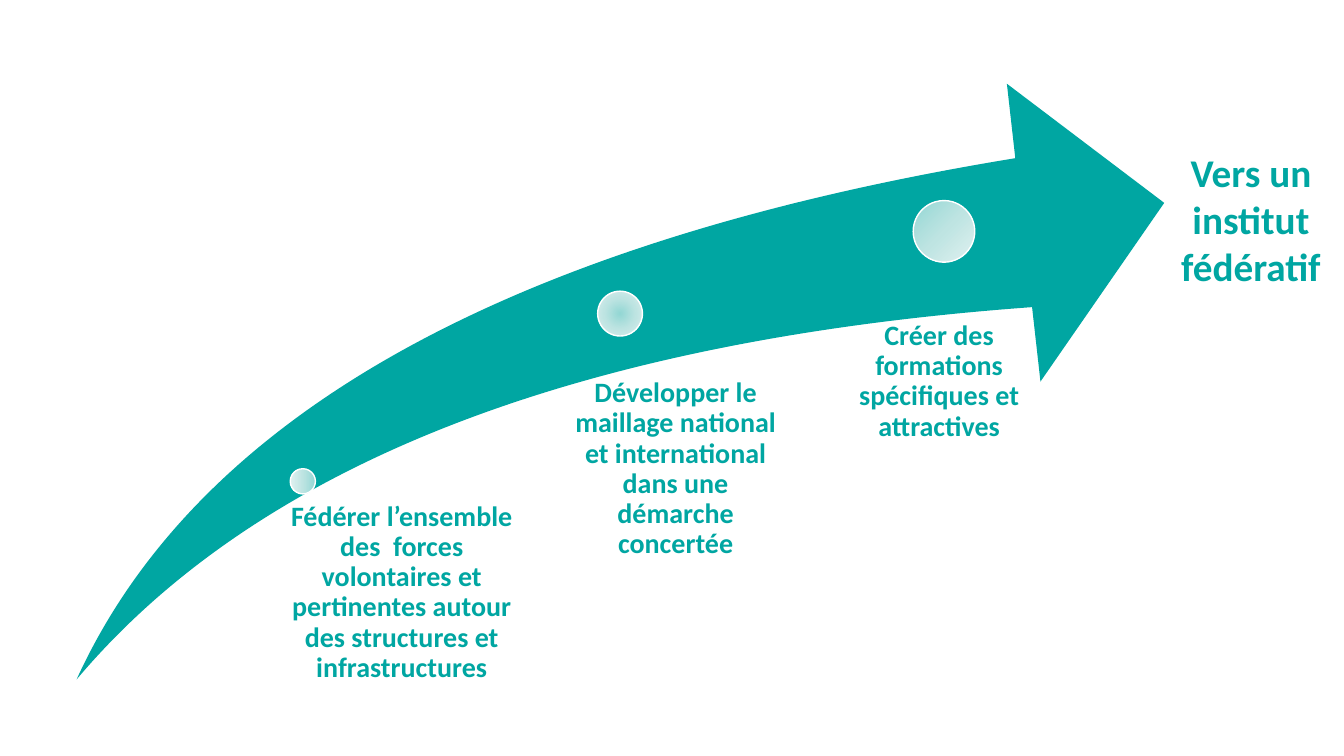
from collections import namedtuple

from pptx import Presentation
from pptx.dml.color import RGBColor
from pptx.enum.shapes import MSO_SHAPE
from pptx.enum.text import PP_ALIGN
from pptx.oxml import parse_xml
from pptx.oxml.ns import nsdecls, qn
from pptx.util import Pt

TEAL = RGBColor(0x00, 0xA6, 0xA2)
WHITE = RGBColor(0xFF, 0xFF, 0xFF)
MINTS = (
    RGBColor(0x93, 0xD7, 0xD4),
    RGBColor(0xBE, 0xE4, 0xE2),
    RGBColor(0xE0, 0xF1, 0xF0),
)

LEFTWARD = '<a:lin ang="10800000" scaled="0"/>'
FROM_CENTRE = '<a:path path="circle"><a:fillToRect l="50000" t="50000" r="50000" b="50000"/></a:path>'
FROM_CORNER = '<a:path path="circle"><a:fillToRect r="100000" b="100000"/></a:path>'

Box = namedtuple("Box", "left top width height")
Milestone = namedtuple("Milestone", "wording centre diameter shading caption inset")

SWOOSH = Box(54.7, 59.8, 776.9, 425.5)
GOAL = Box(835.2, 102.2, 116.6, 108.7)

MILESTONES = (
    Milestone(
        "Fédérer l’ensemble des  forces volontaires et pertinentes autour des structures et infrastructures",
        (161.6, 284), 18, LEFTWARD, Box(132.5, 298.8, 190, 123), (9.5, 0),
    ),
    Milestone(
        "Développer le maillage national et international dans une démarche concertée",
        (388.2, 164.2), 32, FROM_CENTRE, Box(337.7, 168.5, 163.4, 231), (17, 42),
    ),
    Milestone(
        "Créer des formations spécifiques et attractives",
        (619.6, 105.5), 44, FROM_CORNER, Box(522.7, 107.3, 163.4, 255), (23.5, 62.3),
    ),
)


def points(box):
    return [Pt(length) for length in box]


def add_text(slide, box, paragraphs, size, insets, line_spacing=1.0):
    frame = slide.shapes.add_textbox(*points(box)).text_frame
    frame.word_wrap = True
    frame.margin_left, frame.margin_top, frame.margin_right, frame.margin_bottom = points(insets)
    for index, wording in enumerate(paragraphs):
        paragraph = frame.paragraphs[0] if index == 0 else frame.add_paragraph()
        paragraph.alignment = PP_ALIGN.CENTER
        paragraph.line_spacing = line_spacing
        run = paragraph.add_run()
        run.text = wording
        run.font.name = "Calibri"
        run.font.size = Pt(size)
        run.font.bold = True
        run.font.color.rgb = TEAL


def shade(dot, direction):
    stops = "".join(
        f'<a:gs pos="{index * 50000}"><a:srgbClr val="{mint}"/></a:gs>'
        for index, mint in enumerate(MINTS)
    )
    gradient = parse_xml(
        f'<a:gradFill {nsdecls("a")} rotWithShape="1"><a:gsLst>{stops}</a:gsLst>{direction}</a:gradFill>'
    )
    dot.fill.gradient()
    properties = dot._element.spPr
    properties.replace(properties.find(qn("a:gradFill")), gradient)


def add_swoosh(slide, box):
    swoosh = slide.shapes.add_shape(MSO_SHAPE.SWOOSH_ARROW, *points(box))
    swoosh.adjustments[0] = 0.25
    swoosh.adjustments[1] = 0.25
    swoosh.shadow.inherit = False
    swoosh.fill.solid()
    swoosh.fill.fore_color.rgb = TEAL
    swoosh.line.fill.background()


def add_milestone(slide, box, milestone):
    x, y = milestone.centre
    diameter = milestone.diameter
    place = Box(box.left + x - diameter / 2, box.top + y - diameter / 2, diameter, diameter)
    dot = slide.shapes.add_shape(MSO_SHAPE.OVAL, *points(place))
    dot.shadow.inherit = False
    shade(dot, milestone.shading)
    dot.line.color.rgb = WHITE
    dot.line.width = Pt(1)

    caption = milestone.caption
    caption_box = caption._replace(left=box.left + caption.left, top=box.top + caption.top)
    add_text(slide, caption_box, [milestone.wording], size=20,
             insets=(*milestone.inset, 0, 0), line_spacing=0.9)


def add_goal(slide, box):
    add_text(slide, box, ["Vers un institut", "fédératif"], size=28, insets=(7.2, 3.6, 7.2, 3.6))


def main():
    presentation = Presentation()
    presentation.slide_width = Pt(960)
    presentation.slide_height = Pt(540)
    slide = presentation.slides.add_slide(presentation.slide_layouts[6])
    add_swoosh(slide, SWOOSH)
    for milestone in MILESTONES:
        add_milestone(slide, SWOOSH, milestone)
    add_goal(slide, GOAL)
    presentation.save("out.pptx")


if __name__ == "__main__":
    main()
